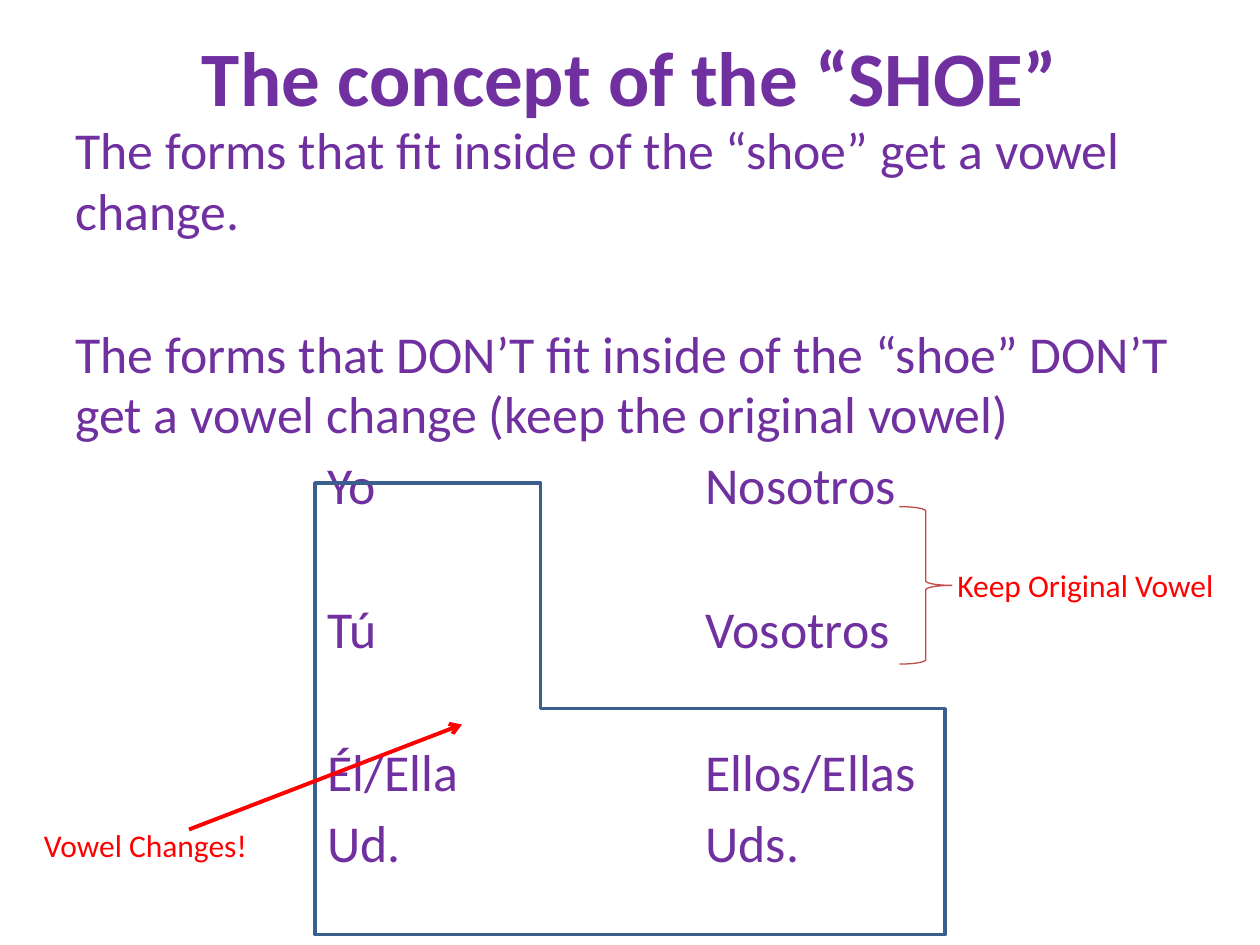
import pptx
import pptx.util
import pptx.dml.color
import pptx.enum.shapes
import pptx.enum.text
from lxml import etree

Pt = pptx.util.Pt
SHAPE = pptx.enum.shapes.MSO_SHAPE
ALIGN = pptx.enum.text.PP_ALIGN
ANCHOR = pptx.enum.text.MSO_ANCHOR

# Content
PURPLE, RED, BLUE, BRICK = "7030A0", "FF0000", "3A5F8C", "BF4C48"
TITLE = "The concept of the “SHOE”"
RULES = [
    "The forms that fit inside of the “shoe” get a vowel change.",
    "The forms that DON’T fit inside of the “shoe” DON’T get a vowel change (keep the original vowel)",
]
# Singular, plural, and whether an empty line's height goes above
PRONOUNS = [
    ("Yo", "Nosotros", False),
    ("Tú", "Vosotros", True),
    ("Él/Ella", "Ellos/Ellas", True),
    ("Ud.", "Uds.", False),
]
LABELS = [
    ("Vowel Changes!", (18, 468.7, 138, 29)),
    ("Keep Original Vowel", (540, 319.7, 168, 29)),
]
# Preset, place, line colour, line width
OUTLINES = [
    (SHAPE.CORNER, (180, 276, 360, 258), BLUE, 2),
    (SHAPE.RIGHT_BRACE, (514, 289.5, 30, 90), BRICK, 0.75),
]
ARROW = (108, 474, 264, 414)

# Text spacing
TAB_STOPS = (144, 360)
LINE_SPACING = 0.975
GAP = 6
WIDE_GAP = 47.5


def rgb(value):
    return pptx.dml.color.RGBColor.from_string(value)


def points(values):
    return [Pt(value) for value in values]


def apply(target, formats):
    for name, value in formats.items():
        setattr(target, name, value)


def write(para, text, size, color, bold=False):
    span = para.add_run()
    span.text = text
    apply(span.font, {"name": "Calibri", "size": Pt(size), "bold": bold})
    span.font.color.rgb = rgb(color)


def add_box(place):
    box = slide.shapes.add_textbox(*points(place))
    box.text_frame.word_wrap = True
    return box.text_frame


def set_line(shape, color, width):
    shape.line.color.rgb = rgb(color)
    shape.line.width = Pt(width)


def add_tabs(para):
    tabs = etree.SubElement(para._p.get_or_add_pPr(), pptx.oxml.ns.qn("a:tabLst"))
    for stop in TAB_STOPS:
        etree.SubElement(tabs, pptx.oxml.ns.qn("a:tab"), pos=str(Pt(stop)), algn="l")


deck = pptx.Presentation()
apply(deck, {"slide_width": Pt(720), "slide_height": Pt(540)})
slide = deck.slides.add_slide(deck.slide_layouts[5])

# Title
title = slide.shapes.title
apply(title, dict(zip(("left", "top", "width", "height"), points((36, 6, 648, 74)))))
title.text_frame.vertical_anchor = ANCHOR.MIDDLE
heading = title.text_frame.paragraphs[0]
heading.alignment = ALIGN.CENTER
write(heading, TITLE, 44, PURPLE, bold=True)

# Rules and pronouns
lines = [(rule, index > 0) for index, rule in enumerate(RULES)]
lines += [(f"\t{singular}\t{plural}", wide) for singular, plural, wide in PRONOUNS]
body = add_box((36, 66, 672, 462))
for index, (text, wide) in enumerate(lines):
    para = body.add_paragraph() if index else body.paragraphs[0]
    apply(para, {"line_spacing": LINE_SPACING, "space_before": Pt(WIDE_GAP if wide else GAP)})
    if "\t" in text:
        add_tabs(para)
    write(para, text, 29.6, PURPLE)

# Shoe and brace
for preset, place, color, width in OUTLINES:
    outline = slide.shapes.add_shape(preset, *points(place))
    outline.shadow.inherit = False
    outline.fill.background()
    set_line(outline, color, width)

# Arrow into the shoe
arrow = slide.shapes.add_connector(pptx.enum.shapes.MSO_CONNECTOR.STRAIGHT, *points(ARROW))
set_line(arrow, RED, 2.25)
etree.SubElement(arrow.line._get_or_add_ln(), pptx.oxml.ns.qn("a:tailEnd"), type="arrow")
etree.SubElement(arrow._element.spPr, pptx.oxml.ns.qn("a:effectLst"))

# Labels
for text, place in LABELS:
    write(add_box(place).paragraphs[0], text, 18, RED)

deck.save("out.pptx")
